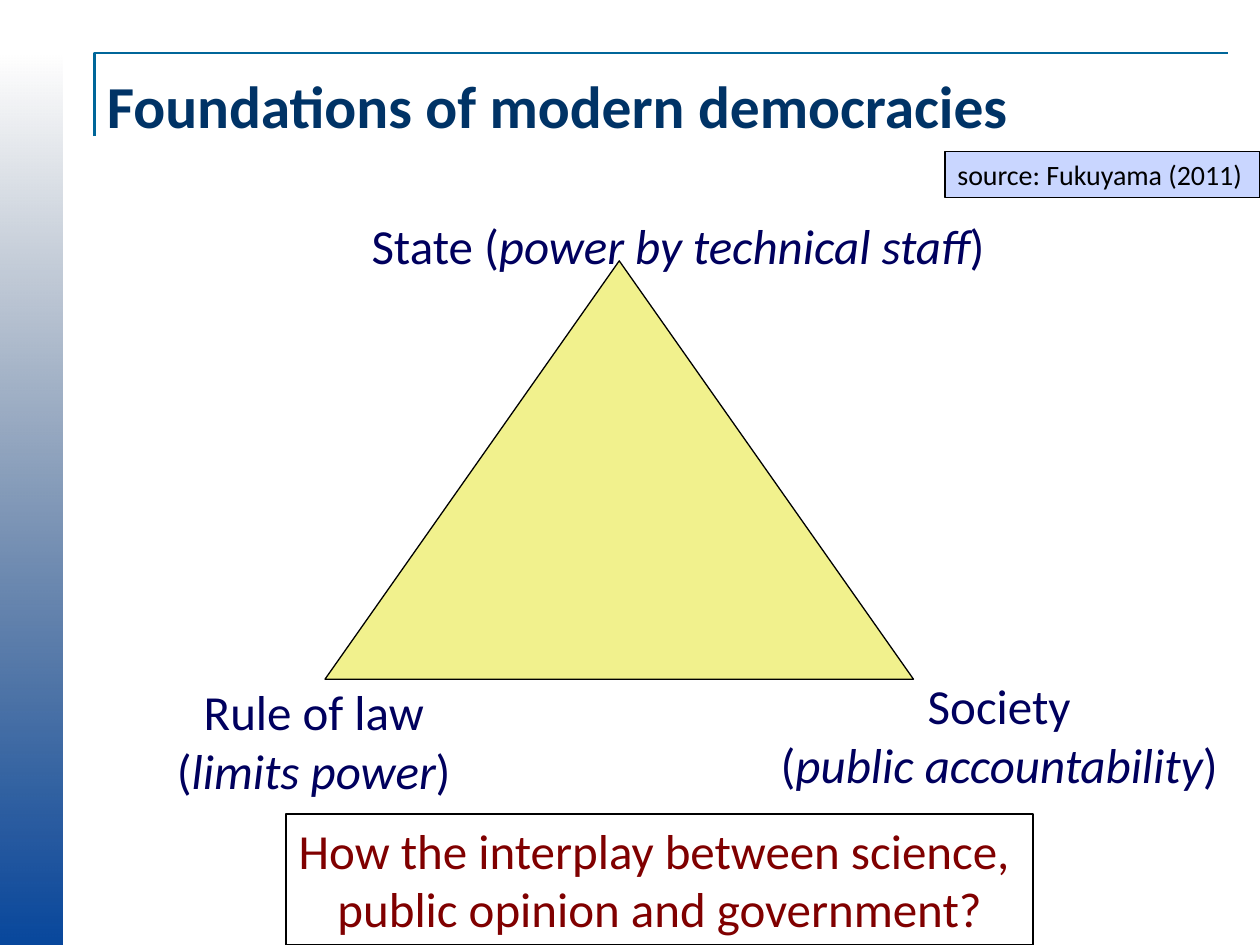
from lxml import etree
from pptx import Presentation
from pptx.dml.color import RGBColor
from pptx.enum.shapes import MSO_SHAPE
from pptx.enum.text import MSO_ANCHOR, PP_ALIGN
from pptx.oxml.ns import qn
from pptx.util import Inches, Pt

RECT = MSO_SHAPE.RECTANGLE
TRIANGLE = MSO_SHAPE.ISOSCELES_TRIANGLE
LEFT, CENTER = PP_ALIGN.LEFT, PP_ALIGN.CENTER
MIDDLE, TOP = MSO_ANCHOR.MIDDLE, MSO_ANCHOR.TOP

BLACK = RGBColor(0x00, 0x00, 0x00)
BLUE = RGBColor(0x08, 0x47, 0x9C)
DARK = RGBColor(0x04, 0x21, 0x48)
TEAL = RGBColor(0x00, 0x66, 0x99)
TITLE = RGBColor(0x00, 0x33, 0x66)
NAVY = RGBColor(0x00, 0x00, 0x5E)
MAROON = RGBColor(0x80, 0x00, 0x00)
YELLOW = RGBColor(0xF1, 0xF1, 0x8D)
PALE = RGBColor(0xC9, 0xD6, 0xFF)

prs = Presentation()
prs.slide_width, prs.slide_height = Inches(10), Inches(7.5)
shapes = prs.slides.add_slide(prs.slide_layouts[6]).shapes


def add_shape(kind, box, fill=None, line=BLACK):
    shape = shapes.add_shape(kind, *map(Inches, box))
    shape.shadow.inherit = False
    if fill is None:
        shape.fill.background()
    else:
        shape.fill.solid()
        shape.fill.fore_color.rgb = fill
    if line is None:
        shape.line.fill.background()
    else:
        shape.line.color.rgb = line
        shape.line.width = Pt(0.75)
    return shape


def write(shape, lines, size, color, align=LEFT, anchor=TOP, bold=False):
    """Each line is a list of runs; every second run is italic."""
    frame = shape.text_frame
    frame.word_wrap = False
    frame.vertical_anchor = anchor
    for i, runs in enumerate(lines):
        para = frame.add_paragraph() if i else frame.paragraphs[0]
        para.alignment = align
        font = para.font
        font.name, font.size, font.bold = "Calibri", Pt(size), bold
        font.color.rgb = color
        for j, text in enumerate(runs):
            run = para.add_run()
            run.text = text
            if j % 2:
                run.font.italic = True


# Side bar, fading out towards the top
bar = add_shape(RECT, (0, 0.42, 0.5, 7.08), line=None)
bar.fill.gradient()
bar.fill.gradient_angle = 90
for stop, color in zip(bar.fill.gradient_stops, (BLUE, DARK)):
    stop.color.rgb = color
clear = bar.fill.gradient_stops[1]
tint = list(bar._element.spPr.iter(qn("a:srgbClr")))[-1]
etree.SubElement(tint, qn("a:alpha")).set("val", "0")

# Title with its corner line
pen = shapes.build_freeform(Inches(0.75), Inches(1.08))
pen.add_line_segments(
    [(Inches(0.75), Inches(0.42)), (Inches(9.75), Inches(0.42))], close=False)
corner = pen.convert_to_shape()
corner.shadow.inherit = False
corner.fill.background()
corner.line.color.rgb = TEAL
corner.line.width = Pt(1.5)

title = shapes.add_textbox(*map(Inches, (0.75, 0.42, 8.92, 0.83)))
write(title, [["Foundations of modern democracies"]], 34, TITLE,
      anchor=MIDDLE, bold=True)

# Triangle and the labels at its corners
add_shape(TRIANGLE, (2.58, 2.07, 4.67, 3.32), YELLOW)
labels = [
    ((2.85, 1.66, 5.15, 0.57), LEFT,
     [["State (", "power by technical staff", ")"]]),
    ((6.06, 5.31, 3.74, 1.04), CENTER,
     [["Society"], ["(", "public accountability", ")"]]),
    ((1.29, 5.36, 2.4, 1.04), CENTER,
     [["Rule of law"], ["(", "limits power", ")"]]),
]
for box, align, lines in labels:
    label = shapes.add_textbox(*map(Inches, box))
    write(label, lines, 28, NAVY, align)

# Source note and closing question
note = add_shape(RECT, (7.5, 1.2, 2.5, 0.37), PALE)
write(note, [["source: Fukuyama (2011)"]], 16, BLACK)
ask = add_shape(RECT, (2.27, 6.46, 5.93, 1.04))
write(ask, [["How the interplay between science, "],
            ["public opinion and government?"]], 28, MAROON, CENTER)

prs.save("out.pptx")
